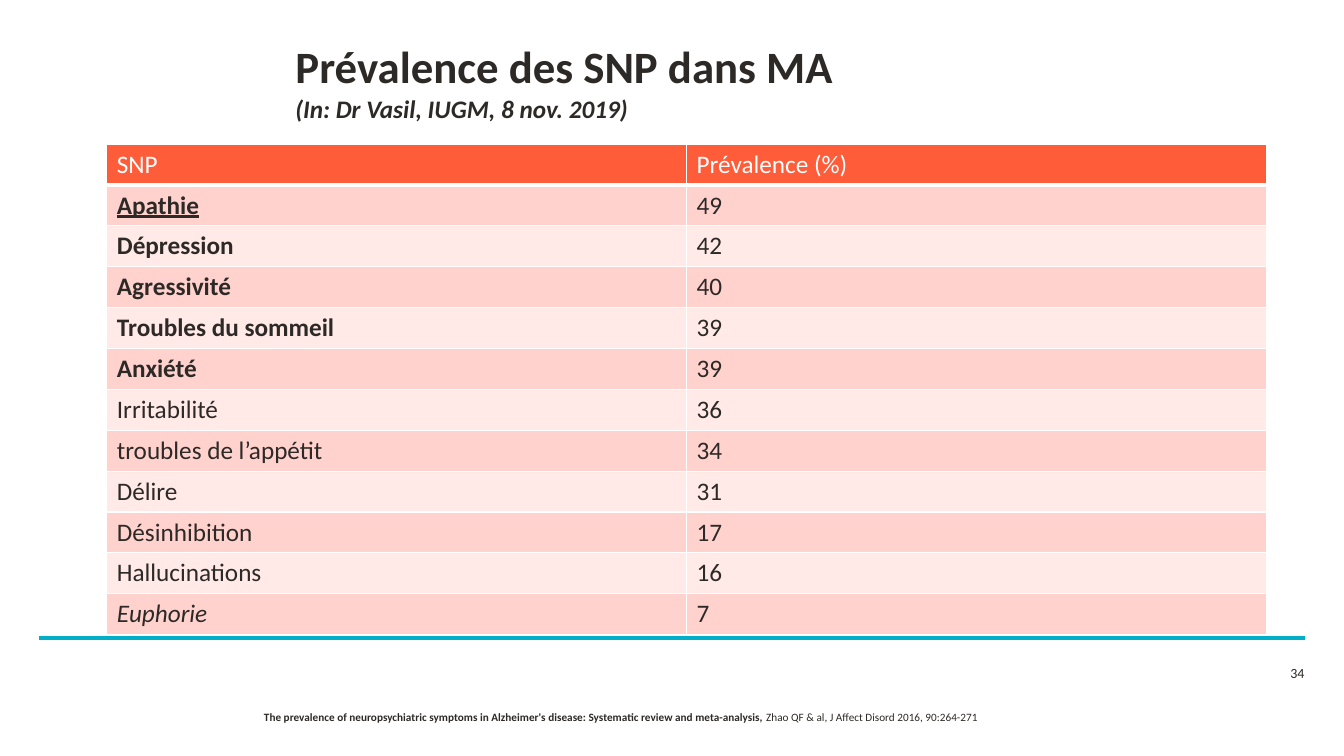
from dataclasses import dataclass

from lxml import etree
from pptx import Presentation
from pptx import util as u
from pptx.dml.color import RGBColor
from pptx.enum import shapes, text
from pptx.oxml.ns import qn


@dataclass(frozen=True)
class Theme:
    font: str = "Calibri"
    ink: str = "2D2926"
    white: str = "FFFFFF"
    header: str = "FF5C39"
    bands: tuple = ("FFD2CE", "FFEAE8")
    rule: str = "00AEC7"
    title_size: int = 32
    body_size: int = 18
    number_size: int = 10
    citation_size: int = 8


THEME = Theme()
BOLD, ITALIC, UNDERLINE = "bold", "italic", "underline"

# Symptom, prevalence in percent, emphasis of the symptom
SYMPTOMS = [
    ("Apathie", 49, (BOLD, UNDERLINE)),
    ("Dépression", 42, (BOLD,)),
    ("Agressivité", 40, (BOLD,)),
    ("Troubles du sommeil", 39, (BOLD,)),
    ("Anxiété", 39, (BOLD,)),
    ("Irritabilité", 36, ()),
    ("troubles de l’appétit", 34, ()),
    ("Délire", 31, ()),
    ("Désinhibition", 17, ()),
    ("Hallucinations", 16, ()),
    ("Euphorie", 7, (ITALIC,)),
]


def px(length):
    """Whole px to EMU, at 100 px to the inch."""
    return u.Emu(length * 9144)


def style_font(font, size, color=THEME.ink, emphasis=()):
    font.name = THEME.font
    font.size = u.Pt(size)
    font.color.rgb = RGBColor.from_string(color)
    for name in emphasis:
        setattr(font, name, True)


def add_text(slide, box, content, size):
    frame = slide.shapes.add_textbox(*map(px, box)).text_frame
    frame.word_wrap = True
    paragraph = frame.paragraphs[0]
    for words, emphasis in content:
        run = paragraph.add_run()
        run.text = words
        for name in emphasis:
            setattr(run.font, name, True)
    style_font(paragraph.font, size)


# Footer rule and slide number
def add_footer(slide, box, number):
    left, top, width, height = box
    rule = slide.shapes.add_connector(
        shapes.MSO_CONNECTOR.STRAIGHT, px(left), px(top), px(left + width), px(top))
    rule.line.color.rgb = RGBColor.from_string(THEME.rule)
    rule.line.width = u.Pt(3)
    etree.SubElement(rule._element.spPr, qn("a:effectLst"))
    add_text(slide, (left + width - 24, top + 21, 63, height - 21),
             [(number, ())], THEME.number_size)


# Title with its source on a second line
def add_title(slide, box, heading, source):
    title = slide.shapes.title
    title.left, title.top, title.width, title.height = map(px, box)
    frame = title.text_frame
    frame.auto_size = text.MSO_AUTO_SIZE.NONE
    frame.vertical_anchor = text.MSO_ANCHOR.MIDDLE
    paragraph = frame.paragraphs[0]
    paragraph.alignment = text.PP_ALIGN.LEFT
    run = paragraph.add_run()
    run.text = heading
    style_font(run.font, THEME.title_size, emphasis=(BOLD,))
    paragraph.add_line_break()
    run = paragraph.add_run()
    run.text = source
    style_font(run.font, THEME.body_size, emphasis=(BOLD, ITALIC))


def set_borders(cell, bottom_width=1):
    properties = cell._tc.get_or_add_tcPr()
    for index, side in enumerate("LRTB"):
        width = bottom_width if side == "B" else 1
        line = etree.Element(qn(f"a:ln{side}"), w=str(u.Pt(width)))
        fill = etree.SubElement(line, qn("a:solidFill"))
        etree.SubElement(fill, qn("a:srgbClr"), val=THEME.white)
        properties.insert(index, line)


def fill_cell(cell, words, fill, color=THEME.ink, emphasis=(), bottom_width=1):
    cell.text = words
    cell.fill.solid()
    cell.fill.fore_color.rgb = RGBColor.from_string(fill)
    set_borders(cell, bottom_width)
    style_font(cell.text_frame.paragraphs[0].font, THEME.body_size, color, emphasis)


# Prevalence table
def add_prevalence_table(slide, box, headings, symptoms):
    row_count = len(symptoms) + 1
    table = slide.shapes.add_table(row_count, len(headings), *map(px, box)).table
    for row in table.rows:
        row.height = px(box[3]) // row_count
    for column, heading in enumerate(headings):
        fill_cell(table.cell(0, column), heading, THEME.header, THEME.white,
                  bottom_width=3)
    for row, (symptom, percent, emphasis) in enumerate(symptoms, start=1):
        band = THEME.bands[(row - 1) % 2]
        fill_cell(table.cell(row, 0), symptom, band, emphasis=emphasis)
        fill_cell(table.cell(row, 1), str(percent), band)


def main():
    presentation = Presentation()
    presentation.slide_width, presentation.slide_height = px(1333), px(750)
    slide = presentation.slides.add_slide(presentation.slide_layouts.get_by_name("Title Only"))

    add_footer(slide, (39, 633, 1255, 61), "34")
    add_title(slide, (283, 28, 768, 105), "Prévalence des SNP dans MA",
              "(In: Dr Vasil, IUGM, 8 nov. 2019)")
    add_prevalence_table(slide, (106, 143, 1150, 487), ("SNP", "Prévalence (%)"), SYMPTOMS)
    add_text(slide, (252, 700, 750, 24), [
        ("The prevalence of neuropsychiatric symptoms in Alzheimer's disease: "
         "Systematic review and meta-analysis, ", (BOLD,)),
        ("Zhao QF & al, J Affect Disord 2016, 90:264-271", ()),
    ], THEME.citation_size)

    presentation.save("out.pptx")


if __name__ == "__main__":
    main()
